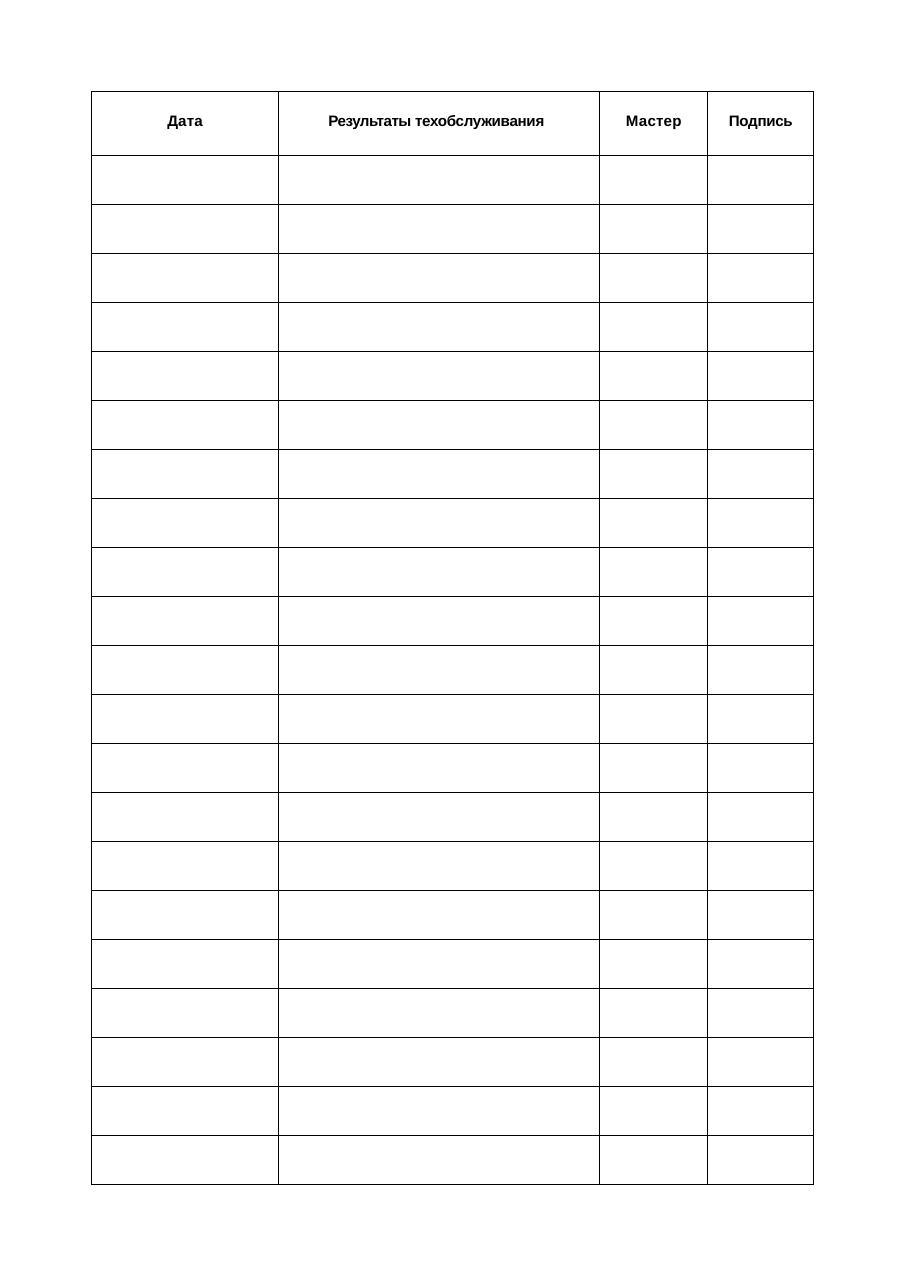
from lxml.etree import SubElement
from pptx import Presentation
from pptx.dml.color import RGBColor
from pptx.enum.text import MSO_ANCHOR, PP_ALIGN
from pptx.oxml.ns import qn
from pptx.util import Pt

BLACK = RGBColor(0, 0, 0)
COLUMN_WIDTHS = [86.5, 148.5, 50, 49]
HEADER_HEIGHT = 29.5
ENTRY_HEIGHT = 22.66
ENTRY_COUNT = 21
# Each heading is a list of (text, letter spacing in points)
HEADINGS = [
    [("Дата", 0.1)],
    [("Результаты ", -0.2), ("техобслуживания", -0.1)],
    [("Мастер", 0.1)],
    [("Подпись", -0.1)],
]


def add_text(paragraph, text, *, font, size, color, bold=False, spacing=0):
    run = paragraph.add_run()
    run.text = text
    run.font.name = font
    run.font.size = Pt(size)
    run.font.bold = bold
    run.font.color.rgb = color
    run.font._element.set("spc", str(round(spacing * 100)))


class ServiceLog:
    """Holds the style of the service log and the slide it is drawn on."""

    font = "Arial"
    text_size = 7
    color = BLACK
    border_width = 0.5

    def __init__(self, slide):
        self.slide = slide

    def add_table(self, left, top, column_widths, row_heights):
        shape = self.slide.shapes.add_table(
            len(row_heights), len(column_widths), Pt(left), Pt(top),
            Pt(sum(column_widths)), Pt(sum(row_heights)))
        table = shape.table
        table.first_row = False
        table.horz_banding = False
        for column, width in zip(table.columns, column_widths):
            column.width = Pt(width)
        for row, height in zip(table.rows, row_heights):
            row.height = Pt(height)
        for cell in table.iter_cells():
            self.format_cell(cell)
        return table

    def format_cell(self, cell):
        cell.margin_left = cell.margin_right = Pt(0)
        cell.margin_top = cell.margin_bottom = Pt(0)
        properties = cell._tc.get_or_add_tcPr()
        for side in ("a:lnL", "a:lnR", "a:lnT", "a:lnB"):
            border = SubElement(properties, qn(side), w=str(Pt(self.border_width)))
            fill = SubElement(border, qn("a:solidFill"))
            SubElement(fill, qn("a:srgbClr"), val=str(self.color))
        cell.fill.background()

    def add_heading(self, cell, parts):
        cell.vertical_anchor = MSO_ANCHOR.TOP
        cell.margin_top = Pt(9.7)
        paragraph = cell.text_frame.paragraphs[0]
        paragraph.alignment = PP_ALIGN.CENTER
        for text, spacing in parts:
            add_text(paragraph, text, font=self.font, size=self.text_size,
                     color=self.color, bold=True, spacing=spacing)


def main():
    presentation = Presentation()
    presentation.slide_width = Pt(419.76)
    presentation.slide_height = Pt(595.44)
    slide = presentation.slides.add_slide(presentation.slide_layouts[6])

    log = ServiceLog(slide)
    row_heights = [HEADER_HEIGHT] + [ENTRY_HEIGHT] * ENTRY_COUNT
    table = log.add_table(42.3, 42.3, COLUMN_WIDTHS, row_heights)
    for column, parts in enumerate(HEADINGS):
        log.add_heading(table.cell(0, column), parts)
    table.cell(0, 1).margin_right = Pt(2.6)

    presentation.save("out.pptx")


if __name__ == "__main__":
    main()
